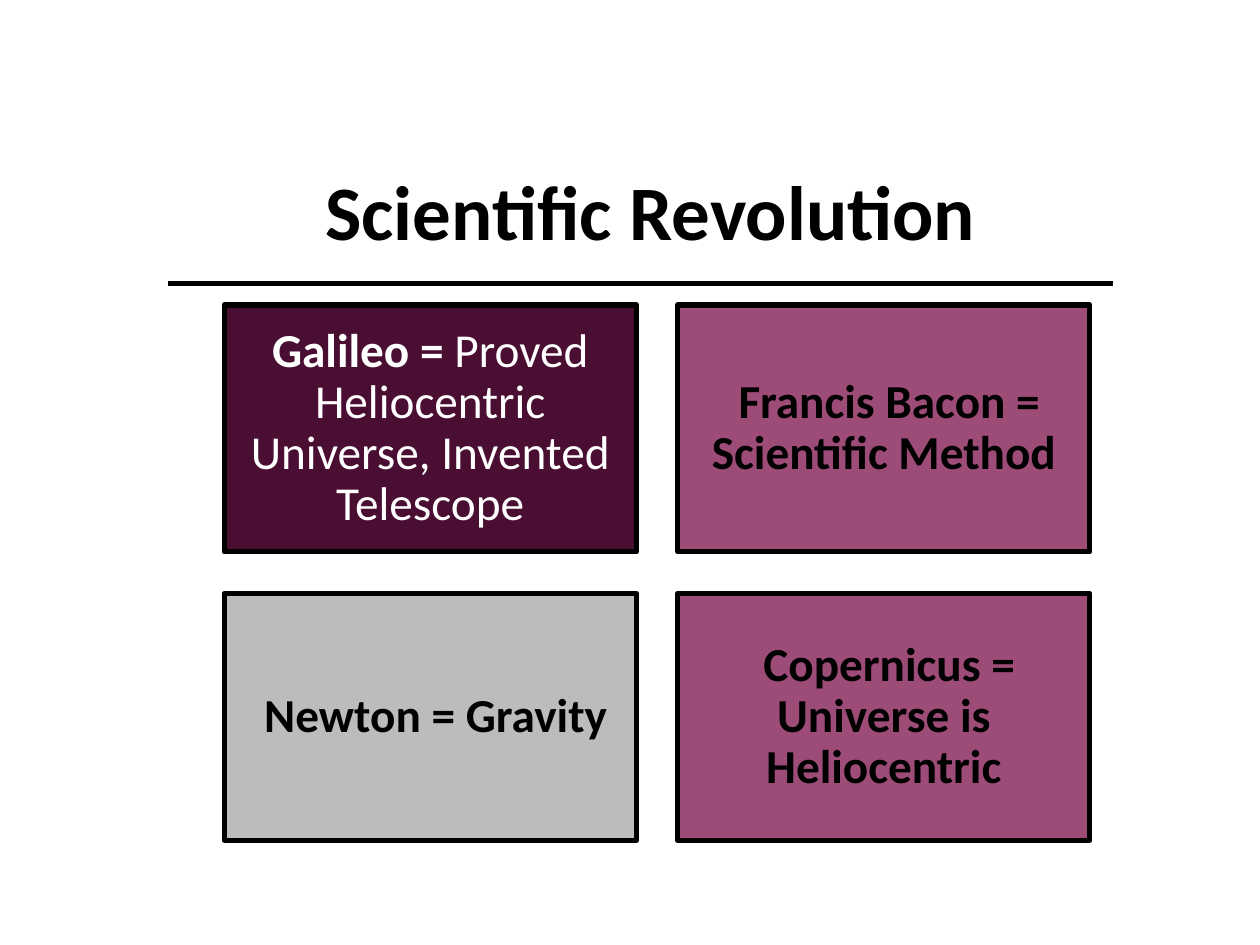
from dataclasses import dataclass

from lxml.etree import SubElement
from pptx import Presentation
from pptx.dml.color import RGBColor
from pptx.enum.shapes import MSO_CONNECTOR, MSO_SHAPE
from pptx.enum.text import MSO_ANCHOR, PP_ALIGN
from pptx.oxml.ns import qn
from pptx.util import Inches, Pt


@dataclass(frozen=True)
class Theme:
    font: str = "Calibri"
    title_size: int = 44
    card_size: int = 27
    line_width: int = 3
    black: str = "000000"
    white: str = "FFFFFF"
    plum: str = "4A0E33"
    mauve: str = "9D4B77"
    grey: str = "BEBBBC"


class SlideBuilder:
    def __init__(self, s, theme):
        self.s = s
        self.theme = theme

    def add_runs(self, p, runs, size, color):
        p.alignment = PP_ALIGN.CENTER
        for text, bold in runs:
            r = p.add_run()
            r.text = text
            r.font.name = self.theme.font
            r.font.size = Pt(size)
            r.font.bold = bold
            r.font.color.rgb = RGBColor.from_string(color)

    def outline(self, line):
        line.color.rgb = RGBColor.from_string(self.theme.black)
        line.width = Pt(self.theme.line_width)

    def title(self, x, y, w, h, text):
        tf = self.s.shapes.add_textbox(Inches(x), Inches(y), Inches(w), Inches(h)).text_frame
        tf.word_wrap = True
        self.add_runs(tf.paragraphs[0], [(text, True)], self.theme.title_size, self.theme.black)

    def rule(self, x1, x2, y):
        line = self.s.shapes.add_connector(
            MSO_CONNECTOR.STRAIGHT, Inches(x1), Inches(y), Inches(x2), Inches(y))
        self.outline(line.line)
        SubElement(line._element.spPr, qn("a:effectLst"))

    def card(self, x, y, w, h, fill, color, runs):
        sp = self.s.shapes.add_shape(
            MSO_SHAPE.RECTANGLE, Inches(x), Inches(y), Inches(w), Inches(h))
        sp.shadow.inherit = False
        sp.fill.solid()
        sp.fill.fore_color.rgb = RGBColor.from_string(fill)
        self.outline(sp.line)
        tf = sp.text_frame
        tf.word_wrap = True
        tf.vertical_anchor = MSO_ANCHOR.MIDDLE
        tf.margin_left = tf.margin_right = tf.margin_top = tf.margin_bottom = Inches(0.11)
        p = tf.paragraphs[0]
        p.line_spacing = 0.9
        self.add_runs(p, runs, self.theme.card_size, color)


def main():
    prs = Presentation()
    prs.slide_width, prs.slide_height = Inches(10), Inches(7.5)
    t = Theme()
    b = SlideBuilder(prs.slides.add_slide(prs.slide_layouts[6]), t)

    # Two-by-two grid of scientists
    left, top, w, h, gap = 1.78, 2.42, 3.27, 1.96, 0.33
    cards = [
        (t.plum, t.white, [("Galileo =", True),
                           (" Proved Heliocentric Universe, Invented Telescope", False)]),
        (t.mauve, t.black, [(" ", False), ("Francis Bacon = Scientific Method", True)]),
        (t.grey, t.black, [(" Newton = Gravity", True)]),
        (t.mauve, t.black, [(" ", False), ("Copernicus = Universe is Heliocentric", True)]),
    ]
    for i, (fill, color, runs) in enumerate(cards):
        row, col = divmod(i, 2)
        b.card(left + col * (w + gap), top + row * (h + gap), w, h, fill, color, runs)

    # Heading and rule
    b.rule(1.33, 8.83, 2.25)
    b.title(1.58, 1.25, 7.17, 0.84, "Scientific Revolution")

    prs.save("out.pptx")


if __name__ == "__main__":
    main()
